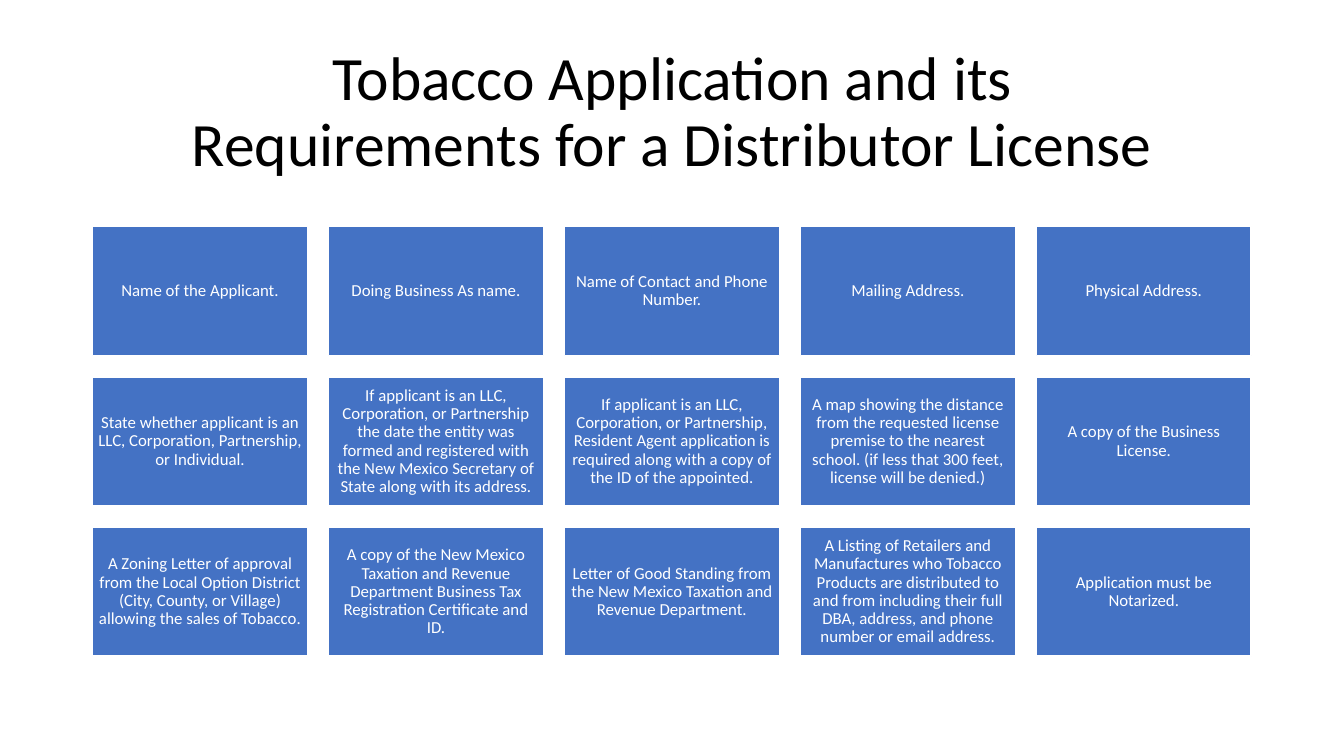
from pptx import Presentation
from pptx.dml.color import RGBColor
from pptx.enum.shapes import MSO_SHAPE
from pptx.enum.text import MSO_ANCHOR, PP_ALIGN
from pptx.util import Inches, Pt

RECT = MSO_SHAPE.RECTANGLE
MIDDLE = MSO_ANCHOR.MIDDLE
CENTER = PP_ALIGN.CENTER

COLORS = {"title": "000000", "box": "4472C4", "white": "FFFFFF"}
FONT = "Calibri"

REQUIREMENTS = [
    "Name of the Applicant.",
    "Doing Business As name.",
    "Name of Contact and Phone Number.",
    "Mailing Address.",
    "Physical Address.",
    "State whether applicant is an LLC, Corporation, Partnership, or Individual.",
    "If applicant is an LLC, Corporation, or Partnership the date the entity was formed "
    "and registered with the New Mexico Secretary of State along with its address.",
    "If applicant is an LLC, Corporation, or Partnership, Resident Agent application is "
    "required along with a copy of the ID of the appointed.",
    "A map showing the distance from the requested license premise to the nearest school. "
    "(if less that 300 feet, license will be denied.)",
    "A copy of the Business License.",
    "A Zoning Letter of approval from the Local Option District (City, County, or Village) "
    "allowing the sales of Tobacco.",
    "A copy of the New Mexico Taxation and Revenue Department Business Tax Registration "
    "Certificate and ID.",
    "Letter of Good Standing from the New Mexico Taxation and Revenue Department.",
    "A Listing of Retailers and Manufactures who Tobacco Products are distributed to and "
    "from including their full DBA, address, and phone number or email address.",
    "Application must be Notarized.",
]
COLUMNS = 5
LEFT, TOP = 0.92, 2.25
BOX_W, BOX_H = 2.13, 1.28
STEP_X, STEP_Y = 2.34, 1.49


def write(sp, text, size, color):
    tf = sp.text_frame
    tf.word_wrap = True
    tf.vertical_anchor = MIDDLE
    p = tf.paragraphs[0]
    p.text = text
    p.alignment = CENTER
    p.line_spacing = 0.9
    for r in p.runs:
        r.font.name = FONT
        r.font.size = Pt(size)
        r.font.color.rgb = RGBColor.from_string(COLORS[color])


prs = Presentation()
prs.slide_width = Inches(13.33)
prs.slide_height = Inches(7.5)
s = prs.slides.add_slide(prs.slide_layouts[6])

title = s.shapes.add_textbox(Inches(LEFT), Inches(0.4), Inches(11.5), Inches(1.45))
write(title, "Tobacco Application and its\vRequirements for a Distributor License", 44, "title")

for i, requirement in enumerate(REQUIREMENTS):
    row, col = divmod(i, COLUMNS)
    sp = s.shapes.add_shape(
        RECT,
        Inches(LEFT + col * STEP_X),
        Inches(TOP + row * STEP_Y),
        Inches(BOX_W),
        Inches(BOX_H),
    )
    sp.shadow.inherit = False
    sp.fill.solid()
    sp.fill.fore_color.rgb = RGBColor.from_string(COLORS["box"])
    sp.line.color.rgb = RGBColor.from_string(COLORS["white"])
    sp.line.width = Pt(1)
    tf = sp.text_frame
    tf.margin_left = tf.margin_right = tf.margin_top = tf.margin_bottom = Inches(0.05)
    write(sp, requirement, 12, "white")

prs.save("out.pptx")
